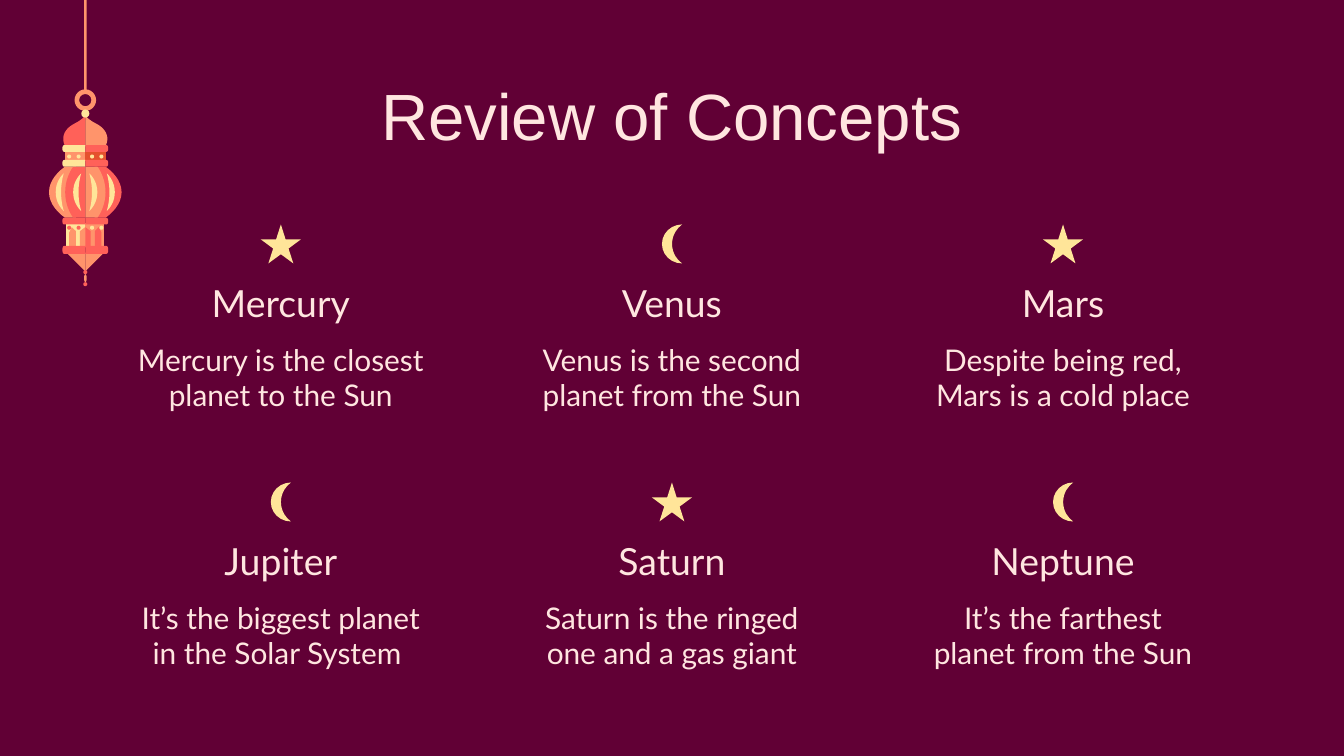
from pptx import Presentation
from pptx.dml.color import RGBColor
from pptx.enum.shapes import MSO_SHAPE
from pptx.enum.text import MSO_ANCHOR, PP_ALIGN
from pptx.util import Inches, Pt

PLUM = RGBColor(0x61, 0x00, 0x35)
BLUSH = RGBColor(0xFF, 0xE6, 0xE0)
CREAM = RGBColor(0xFF, 0xE5, 0x99)
PEACH = RGBColor(0xFF, 0x94, 0x6B)
CORAL = RGBColor(0xFF, 0x61, 0x59)
RUST = RGBColor(0xE5, 0x51, 0x2E)

WIDE = 10
HIGH = WIDE * 9 / 16
TITLE = "Review of Concepts"
STAR, MOON = MSO_SHAPE.STAR_5_POINT, MSO_SHAPE.MOON
ICONS = {STAR: 0.3, MOON: 0.15}  # widths
PLANETS = [
    [("Mercury", ["Mercury is the closest planet to the Sun"], STAR),
     ("Venus", ["Venus is the second planet from the Sun"], MOON),
     ("Mars", ["Despite being red,", "Mars is a cold place"], STAR)],
    [("Jupiter", ["It’s the biggest planet in the Solar System "], MOON),
     ("Saturn", ["Saturn is the ringed one and a gas giant"], STAR),
     ("Neptune", ["It’s the farthest planet from the Sun"], MOON)],
]
COL, ROW, BOX = 2.91, 1.92, 2.33  # column pitch, row pitch, text width


def collar(top, end):
    mid = (top + end) / 2
    return [(0, top), (0.15, top), (0.16, top, 0.17, top, 0.17, mid),
            (0.17, end, 0.16, end, 0.15, end), (0, end)]


def bulge(near, far, inner, top, end):
    """Half of a round body; inner is its straight side."""
    mid, bend = (top + end) / 2, (end - top) * 0.3
    return [(near, top), (near, top, far, mid - bend, far, mid),
            (far, mid + bend, near, end, near, end),
            (inner, end), (inner, top)]


def slit(out):
    tip, back = out + 0.06, out + 0.02
    return [(out, 1.29), (out, 1.29, tip, 1.34, tip, 1.43),
            (tip, 1.52, out, 1.57, out, 1.57),
            (out, 1.57, back, 1.51, back, 1.43),
            (back, 1.35, out, 1.29, out, 1.29)]


# Half outlines: distance out from the axis, then height; six numbers make a curve.
AXIS = 0.635
HALVES = [  # left colour, right colour, outline
    (PEACH, RUST, [(0, 1.13), (0.15, 1.13), (0.15, 1.2), (0, 1.2)]),
    (PEACH, PEACH, [(0, 1.88), (0.14, 1.88), (0, 2.02)]),
    (CREAM, PEACH, [(0, 1.66), (0.14, 1.66), (0.14, 1.84), (0, 1.84)]),
    (PEACH, CORAL, bulge(0.15, 0.27, 0.07, 1.24, 1.62)),
    (CORAL, PEACH, bulge(0.09, 0.15, 0, 1.24, 1.62)),
    (CREAM, CREAM, slit(0.03)),
    (CREAM, CREAM, slit(0.16)),
    (PEACH, CORAL, [(0, 1.69), (0.04, 1.72), (0.04, 1.84), (0, 1.84)]),
    (PEACH, CORAL, [(0.1, 1.69), (0.12, 1.73), (0.12, 1.84),
                    (0.07, 1.84), (0.07, 1.72)]),
    (CORAL, PEACH, [(0, 0.86), (0, 0.86, 0.02, 0.89, 0.08, 0.92),
                    (0.14, 0.95, 0.19, 1.01, 0.15, 1.09), (0, 1.09)]),
    (CREAM, CORAL, collar(1.08, 1.13)),
    (CREAM, CORAL, collar(1.19, 1.24)),
    (CORAL, CORAL, collar(1.62, 1.67)),
    (CORAL, CORAL, collar(1.83, 1.89)),
]
DOTS = [(1.15, CREAM, CREAM), (1.68, CORAL, CREAM)]  # top, left, right
OVAL = MSO_SHAPE.OVAL
BEADS = [  # kind, width, top, end, colour, line width
    (MSO_SHAPE.RECTANGLE, 0.02, 0, 0.67, PEACH, 0),
    (MSO_SHAPE.DONUT, 0.15, 0.67, 0.82, PEACH, 0.75),
    (OVAL, 0.05, 0.82, 0.87, CREAM, 0.75),
    (OVAL, 0.03, 2.01, 2.04, CORAL, 0),
    (OVAL, 0.02, 2.04, 2.1, PEACH, 0),
    (OVAL, 0.03, 2.1, 2.13, CORAL, 0),
]


def paint(shape, color, line=0):
    shape.shadow.inherit = False
    shape.fill.solid()
    shape.fill.fore_color.rgb = color
    if line:
        shape.line.color.rgb = color
        shape.line.width = Pt(line)
    else:
        shape.line.fill.background()
    return shape


def add_form(shapes, kind, mid, top, wide, high, color, line=0):
    """Add a preset shape centred on mid."""
    shape = shapes.add_shape(kind, Inches(mid - wide / 2), Inches(top),
                             Inches(wide), Inches(high))
    return paint(shape, color, line)


def trace(steps, count=10):
    """Turn lines and Bezier curves into points."""
    points = []
    for step in steps:
        if len(step) == 2:
            points.append(step)
            continue
        knots = [points[-1], step[:2], step[2:4], step[4:]]
        for i in range(1, count + 1):
            t = i / count
            parts = ((1 - t) ** 3, 3 * t * (1 - t) ** 2, 3 * t * t * (1 - t), t ** 3)
            points.append(tuple(sum(w * k[a] for w, k in zip(parts, knots))
                                for a in (0, 1)))
    return points


def add_half(shapes, steps, side, color):
    points = [(Inches(AXIS + side * out), Inches(y)) for out, y in trace(steps)]
    pen = shapes.build_freeform(*points[0])
    pen.add_line_segments(points[1:], close=True)
    paint(pen.convert_to_shape(), color)


def add_text(shapes, lines, left, top, wide, high, size=16, font="Lato",
             anchor=MSO_ANCHOR.TOP):
    box = shapes.add_textbox(Inches(left), Inches(top), Inches(wide), Inches(high))
    frame = box.text_frame
    frame.word_wrap = True
    frame.vertical_anchor = anchor
    frame.margin_left = frame.margin_right = Inches(0.1)
    frame.margin_top = frame.margin_bottom = Inches(0.1)
    frame.text = "\n".join(lines)
    for para in frame.paragraphs:
        para.alignment = PP_ALIGN.CENTER
        para.font.size = Pt(size)
        para.font.name = font
        para.font.color.rgb = BLUSH


def add_lamp(shapes):
    for left, right, steps in HALVES:
        add_half(shapes, steps, -1, left)
        add_half(shapes, steps, 1, right)
    for top, left, right in DOTS:
        for out in (0.05, 0.12):
            for side, color in ((-1, left), (1, right)):
                add_form(shapes, OVAL, AXIS + side * out, top, 0.03, 0.03, color)
    for kind, wide, top, end, color, line in BEADS:
        bead = add_form(shapes, kind, AXIS, top, wide, end - top, color, line)
        if kind == MSO_SHAPE.DONUT:
            bead.adjustments[0] = 0.16


def main():
    deck = Presentation()
    deck.slide_width, deck.slide_height = Inches(WIDE), Inches(HIGH)
    slide = deck.slides.add_slide(deck.slide_layouts[6])
    slide.background.fill.solid()
    slide.background.fill.fore_color.rgb = PLUM
    shapes = slide.shapes
    add_text(shapes, [TITLE], 0.34, 0.46, 9.32, 0.63, size=35, font="Arial")
    add_lamp(shapes.add_group_shape().shapes)
    for r, row in enumerate(PLANETS):
        for c, (name, lines, icon) in enumerate(row):
            mid, top = WIDE / 2 + (c - 1) * COL, 1.67 + r * ROW
            left = mid - BOX / 2
            add_form(shapes, icon, mid, top, ICONS[icon], 0.29, CREAM)
            add_text(shapes, [name], left, top + 0.23, BOX, 0.62, size=20,
                     anchor=MSO_ANCHOR.BOTTOM)
            add_text(shapes, lines, left, top + 0.77, BOX, 0.84)
    deck.save("out.pptx")


if __name__ == "__main__":
    main()
